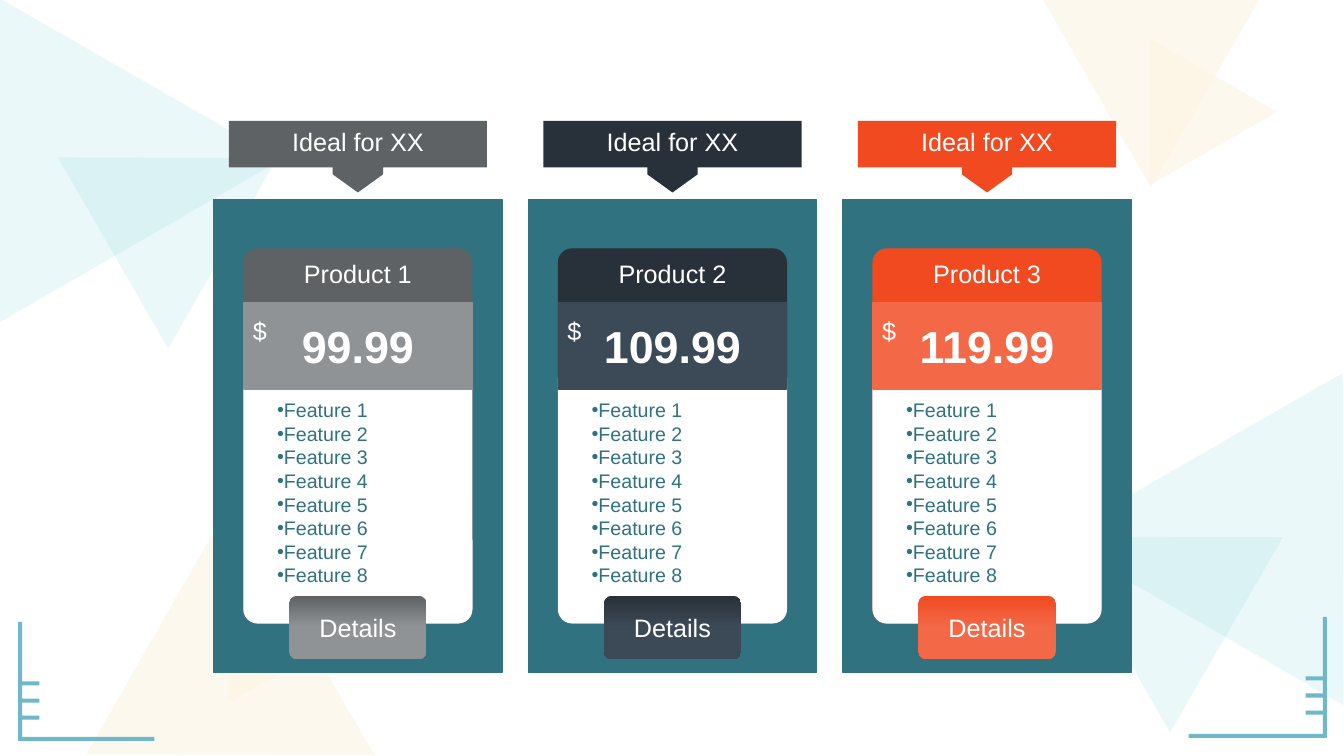
from lxml.etree import SubElement
from pptx import Presentation
from pptx.dml.color import RGBColor
from pptx.enum.shapes import MSO_SHAPE
from pptx.enum.text import MSO_ANCHOR, PP_ALIGN
from pptx.oxml.ns import qn
from pptx.util import Inches, Pt

TEAL = "30727F"
WHITE = "FFFFFF"
MINT = ("85D8DE", 16)
CREAM = ("FDF4E1", 60)
PITCH = 3.12

# left, top, width, height, rotation, (colour, opacity)
TRIANGLES = [
    (-0.92, -0.2, 3.23, 2.78, 330, MINT),
    (0.84, 1.1, 2.19, 1.88, 60, MINT),
    (10.95, 3.51, 3.31, 2.85, 30, MINT),
    (10.21, 4.85, 2.24, 1.93, 300, MINT),
    (0.49, 5.63, 2.87, 2.47, 240, CREAM),
    (1.72, 4.93, 1.94, 1.67, 330, CREAM),
    (10.07, -0.47, 2.16, 1.86, 300, CREAM),
    (10.99, 0.66, 1.46, 1.26, 210, CREAM),
]

# name, price, dark colour, light colour
PLANS = [
    ("Product 1", "99.99", "5F6264", "8F9395"),
    ("Product 2", "109.99", "283139", "3C4956"),
    ("Product 3", "119.99", "F14A21", "F36846"),
]
FEATURES = [f"Feature {n}" for n in range(1, 9)]


def paint(target, color):
    """Give a fill or a line's fill one solid colour."""
    target.solid()
    target.fore_color.rgb = RGBColor.from_string(color)


def write(shape, *lines, size=18, color=WHITE, bold=False, align=PP_ALIGN.CENTER,
          anchor=MSO_ANCHOR.TOP, top=0.05, wrap=True, bullet=False, pitch=None):
    frame = shape.text_frame
    frame.word_wrap = wrap
    frame.vertical_anchor = anchor
    frame.margin_top = Inches(top)
    for i, line in enumerate(lines):
        para = frame.add_paragraph() if i else frame.paragraphs[0]
        para.alignment = align
        if pitch:
            para.line_spacing = Pt(pitch)
        if bullet:
            props = para._p.get_or_add_pPr()
            props.set("marL", "0")
            props.set("indent", str(Inches(0.19)))
            SubElement(props, qn("a:buFont"), typeface="Arial")
            SubElement(props, qn("a:buChar"), char="•")
        run = para.add_run()
        run.text = line
        font = run.font
        font.name, font.size, font.bold = "Arial", Pt(size), bold
        font.color.rgb = RGBColor.from_string(color)


def triangle(slide, left, top, width, height, turn, tint):
    shape = slide.shapes.add_shape(MSO_SHAPE.ISOSCELES_TRIANGLE, Inches(left),
                                   Inches(top), Inches(width), Inches(height))
    color, alpha = tint
    shape.shadow.inherit = False
    shape.rotation = turn
    shape.line.fill.background()
    paint(shape.fill, color)
    hue = shape.fill._xPr.find(qn("a:solidFill"))[0]
    SubElement(hue, qn("a:alpha"), val=str(alpha * 1000))


def panel(slide, left, top, width, height, color, adj=0.0):
    """Rounded box; a pair of colours makes a gradient without outline."""
    shape = slide.shapes.add_shape(MSO_SHAPE.ROUNDED_RECTANGLE, Inches(left),
                                   Inches(top), Inches(width), Inches(height))
    shape.adjustments[0] = adj
    shape.shadow.inherit = False
    if isinstance(color, tuple):
        shape.fill.gradient()
        shape.fill.gradient_angle = 270
        for stop, hue, place in zip(shape.fill.gradient_stops, color, (0, 0.5)):
            stop.color.rgb = RGBColor.from_string(hue)
            stop.position = place
        shape.line.fill.background()
    else:
        paint(shape.fill, color)
        paint(shape.line.fill, color)
        shape.line.width = Pt(1)
    return shape


def outline(slide, points, color):
    """Filled polygon through points given in inches."""
    spots = [(Inches(x), Inches(y)) for x, y in points]
    pen = slide.shapes.build_freeform(*spots[0])
    pen.add_line_segments(spots[1:], close=True)
    shape = pen.convert_to_shape()
    shape.shadow.inherit = False
    paint(shape.fill, color)
    shape.line.fill.background()
    return shape


def corner(slide, x, y, width, height, side):
    """Ruler corner; side is 1 to open rightwards, -1 leftwards."""
    bar = 0.04
    edge = [(0, 0), (bar, 0)]
    for i in range(3):
        tick = 0.59 + 0.17 * i
        edge += [(bar, tick), (0.21, tick), (0.21, tick + bar), (bar, tick + bar)]
    edge += [(bar, height - bar), (width, height - bar), (width, height), (0, height)]
    outline(slide, [(x + side * dx, y + dy) for dx, dy in edge], "6FB8CC")


def banner(slide, left, top, color):
    mid = left + 1.28
    low, neck, tip = top + 0.46, top + 0.53, top + 0.71
    points = [(left, top), (left + 2.56, top), (left + 2.56, low),
              (mid + 0.25, low), (mid + 0.25, neck), (mid, tip),
              (mid - 0.25, neck), (mid - 0.25, low), (left, low)]
    write(outline(slide, points, color), "Ideal for XX")


def card(slide, left, name, price, dark, light):
    inner = left + 0.3
    panel(slide, left, 1.98, 2.86, 4.69, TEAL)
    write(panel(slide, inner, 2.47, 2.26, 3.71, dark, 0.06), name)
    write(panel(slide, inner, 3.62, 2.26, 2.56, WHITE, 0.06), *FEATURES, size=14,
          color=TEAL, align=PP_ALIGN.LEFT, top=0.29, bullet=True, pitch=16.85)
    write(panel(slide, inner, 3, 2.26, 0.86, light), price, size=32, bold=True,
          anchor=MSO_ANCHOR.MIDDLE)
    write(panel(slide, left + 0.75, 5.91, 1.36, 0.63, (dark, light), 0.126),
          "Details", anchor=MSO_ANCHOR.MIDDLE)
    sign = slide.shapes.add_textbox(Inches(inner - 0.01), Inches(3.08),
                                    Inches(0.33), Inches(0.4))
    write(sign, "$", align=PP_ALIGN.LEFT, wrap=False)
    banner(slide, left + 0.15, 1.2, dark)


def main():
    deck = Presentation()
    deck.slide_width, deck.slide_height = Inches(13.33), Inches(7.5)
    slide = deck.slides.add_slide(deck.slide_layouts[6])
    for item in TRIANGLES:
        triangle(slide, *item)
    corner(slide, 0.18, 6.17, 1.35, 1.18, 1)
    corner(slide, 13.16, 6.12, 1.37, 1.2, -1)
    for i, plan in enumerate(PLANS):
        card(slide, 2.12 + PITCH * i, *plan)
    deck.save("out.pptx")


if __name__ == "__main__":
    main()
